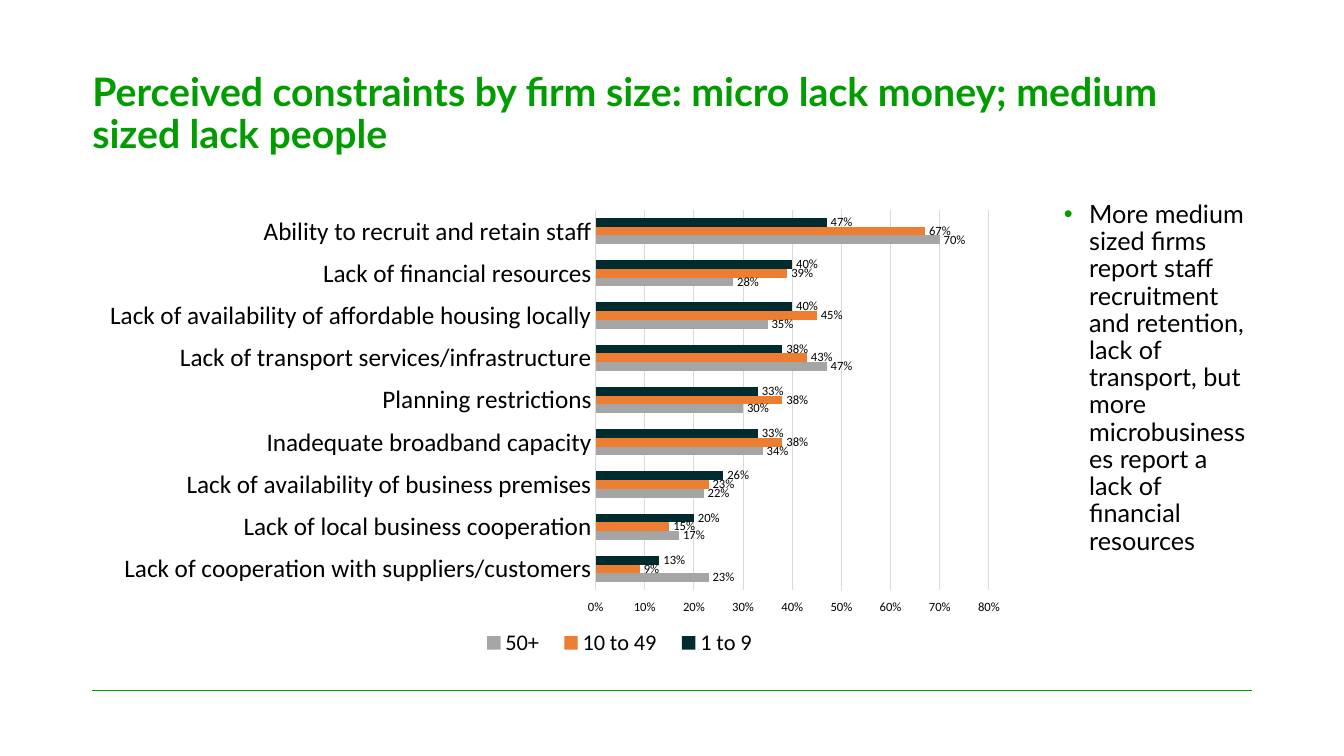
from lxml.etree import SubElement
from pptx import Presentation
from pptx.chart.data import CategoryChartData
from pptx.dml.color import RGBColor
from pptx.enum.chart import (XL_CHART_TYPE, XL_LABEL_POSITION, XL_LEGEND_POSITION,
                             XL_TICK_LABEL_POSITION, XL_TICK_MARK)
from pptx.enum.shapes import MSO_CONNECTOR
from pptx.oxml.ns import qn
from pptx.util import Pt

GREEN, BLACK, GRID = "009C00", "000000", "D9D9D9"
LEFT, RIGHT = 66, 894
PLOT_BOX = (359.5, 6, 281, 271.5)
LEGEND_BOX = (269, 302, 215, 26.5)
CONSTRAINTS = [
    ("Ability to recruit and retain staff", 0.47, 0.67, 0.7),
    ("Lack of financial resources", 0.4, 0.39, 0.28),
    ("Lack of availability of affordable housing locally", 0.4, 0.45, 0.35),
    ("Lack of transport services/infrastructure", 0.38, 0.43, 0.47),
    ("Planning restrictions", 0.33, 0.38, 0.3),
    ("Inadequate broadband capacity", 0.33, 0.38, 0.34),
    ("Lack of availability of business premises", 0.26, 0.23, 0.22),
    ("Lack of local business cooperation", 0.2, 0.15, 0.17),
    ("Lack of cooperation with suppliers/customers", 0.13, 0.09, 0.23),
]
FIRM_SIZES = [("1 to 9", "002C2F"), ("10 to 49", "ED7D31"), ("50+", "A5A5A5")]


def set_all(target, **values):
    for name, value in values.items():
        setattr(target, name, value)


def paint(color_format, color):
    color_format.rgb = RGBColor.from_string(color)


def style_font(font, size, color=BLACK, name="Calibri", bold=False):
    set_all(font, size=Pt(size), name=name, bold=bold)
    paint(font.color, color)


def style_line(line, color, width):
    paint(line.color, color)
    line.width = Pt(width)


def add_text(page, box, text, size, color, bold=False, bullet=None):
    """Add one wrapped paragraph; bullet is the colour of its bullet."""
    frame = page.shapes.add_textbox(*map(Pt, box)).text_frame
    set_all(frame, word_wrap=True, margin_left=0, margin_right=0, margin_top=0, margin_bottom=0)
    para = frame.paragraphs[0]
    para.line_spacing = 0.9
    if bullet:
        properties = para._p.get_or_add_pPr()
        properties.set("marL", str(Pt(18)))
        properties.set("indent", str(Pt(-18)))
        bullet_color = SubElement(properties, qn("a:buClr"))
        SubElement(bullet_color, qn("a:srgbClr"), val=bullet)
        SubElement(properties, qn("a:buFont"), typeface="Arial")
        SubElement(properties, qn("a:buChar"), char="•")
    span = para.add_run()
    span.text = text
    style_font(span.font, size, color, "Lato", bold)


def place_part(part, index, part_box, chart_box):
    """Fix a chart part at part_box, in points from the chart's corner."""
    for old_layout in part.findall(qn("c:layout")):
        part.remove(old_layout)
    layout = SubElement(part, qn("c:layout"))
    part.insert(index, layout)
    manual = SubElement(layout, qn("c:manualLayout"))
    if part.tag == qn("c:plotArea"):
        SubElement(manual, qn("c:layoutTarget"), val="inner")
    for mode in ("xMode", "yMode"):
        SubElement(manual, qn(f"c:{mode}"), val="edge")
    for name, length, whole in zip("xywh", part_box, chart_box[2:] * 2):
        SubElement(manual, qn(f"c:{name}"), val=str(length / whole))


def style_axes(chart):
    categories, values = chart.category_axis, chart.value_axis
    for axis, size in ((categories, 18), (values, 9)):
        set_all(axis, major_tick_mark=XL_TICK_MARK.NONE, minor_tick_mark=XL_TICK_MARK.NONE)
        style_font(axis.tick_labels.font, size)
    categories.reverse_order = True
    style_line(categories.format.line, GRID, 0.75)
    set_all(values, minimum_scale=0, maximum_scale=0.8, major_unit=0.1, has_major_gridlines=True,
            tick_label_position=XL_TICK_LABEL_POSITION.HIGH)
    set_all(values.tick_labels, number_format="0%", number_format_is_linked=False)
    values.format.line.fill.background()
    style_line(values.major_gridlines.format.line, GRID, 0.75)


def add_constraints_chart(page, box):
    names, *columns = zip(*CONSTRAINTS)
    data = CategoryChartData(number_format="0%")
    data.categories = names
    for (firm_size, _), column in zip(FIRM_SIZES, columns):
        data.add_series(firm_size, column)
    chart = page.shapes.add_chart(XL_CHART_TYPE.BAR_CLUSTERED, *map(Pt, box), data).chart
    set_all(chart, has_title=False, has_legend=True)
    style_font(chart.font, 10)
    set_all(chart.legend, position=XL_LEGEND_POSITION.BOTTOM, include_in_layout=False)
    style_font(chart.legend.font, 16)
    style_axes(chart)
    place_part(chart._chartSpace.chart.plotArea, 0, PLOT_BOX, box)
    place_part(chart.legend._element, 1, LEGEND_BOX, box)
    plot = chart.plots[0]
    set_all(plot, gap_width=182, overlap=0, vary_by_categories=False)
    for series, (_, color) in zip(plot.series, FIRM_SIZES):
        series.format.fill.solid()
        paint(series.format.fill.fore_color, color)
        labels = series.data_labels
        set_all(labels, show_value=True, number_format="0%", number_format_is_linked=False,
                position=XL_LABEL_POSITION.OUTSIDE_END)
        style_font(labels.font, 9)


def add_footer_rule(page, top):
    rule = page.shapes.add_connector(MSO_CONNECTOR.STRAIGHT, Pt(LEFT), Pt(top), Pt(RIGHT), Pt(top))
    style_line(rule.line, GREEN, 1)
    SubElement(rule._element.spPr, qn("a:effectLst"))


def main():
    deck = Presentation()
    set_all(deck, slide_width=Pt(960), slide_height=Pt(540))
    page = deck.slides.add_slide(deck.slide_layouts[6])
    add_footer_rule(page, 493.2)
    add_text(page, (LEFT, 52, RIGHT - LEFT, 81),
             "Perceived constraints by firm size: micro lack money; medium sized lack people",
             28, GREEN, bold=True)
    add_text(page, (760, 144, RIGHT - 760, 333),
             "More medium sized firms report staff recruitment and retention, lack of transport, "
             "but more microbusinesses report a lack of financial resources",
             18, BLACK, bullet=GREEN)
    add_constraints_chart(page, (LEFT, 144, 662, 333))
    deck.save("out.pptx")


if __name__ == "__main__":
    main()
